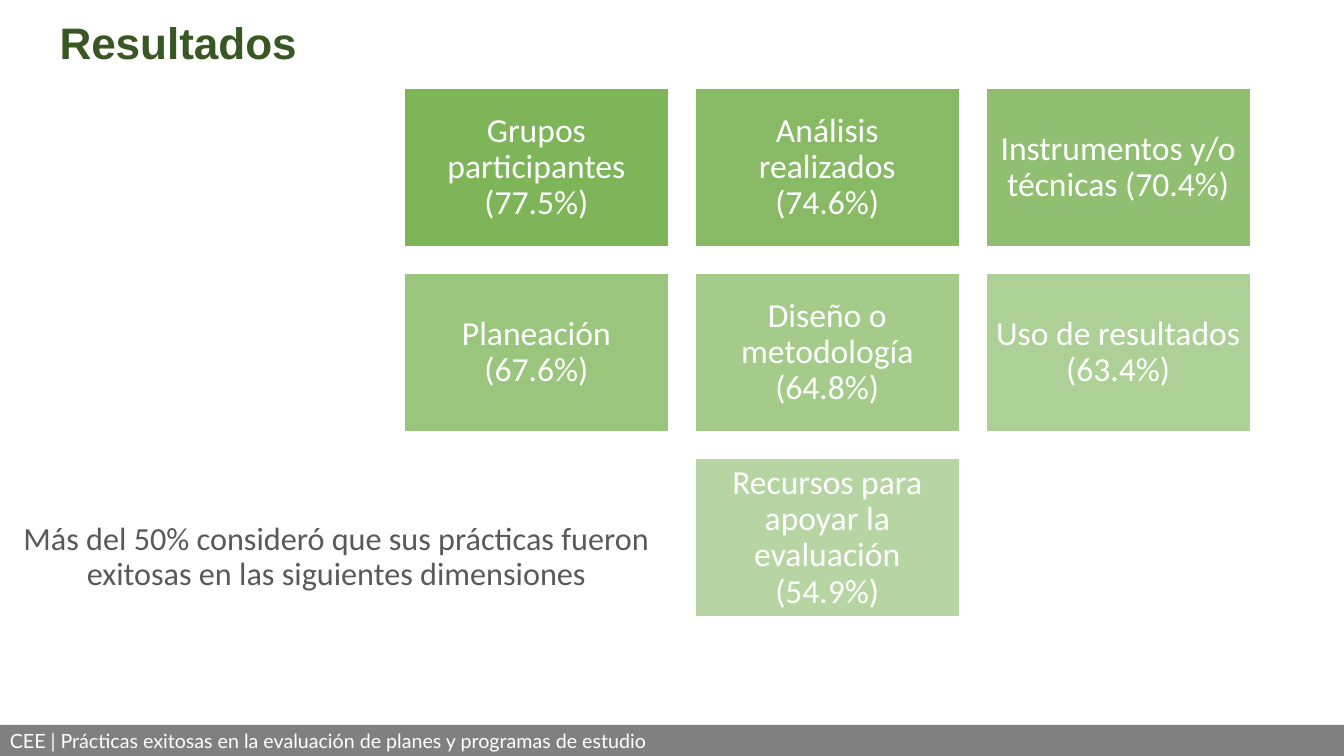
from lxml import etree
from pptx import Presentation
from pptx.dml.color import RGBColor
from pptx.enum.shapes import MSO_SHAPE
from pptx.enum.text import MSO_ANCHOR, MSO_AUTO_SIZE, PP_ALIGN
from pptx.oxml.ns import qn
from pptx.util import Inches, Pt


def color(value):
    return RGBColor.from_string(value)


def write(sp, text, font, size, hex_color, align, spacing, anchor, bold=False):
    tf = sp.text_frame
    tf.word_wrap = True
    tf.auto_size = MSO_AUTO_SIZE.NONE
    tf.vertical_anchor = anchor
    p = tf.paragraphs[0]
    p.text = text
    p.alignment = align
    p.line_spacing = spacing
    p.space_before = Pt(0)
    p.font.name = font
    p.font.size = Pt(size)
    p.font.bold = bold
    p.font.color.rgb = color(hex_color)
    return tf


prs = Presentation()
prs.slide_width = Inches(13.33)
prs.slide_height = Inches(7.5)
s = prs.slides.add_slide(prs.slide_layouts[5])

title = s.shapes.title
title.left, title.top = Inches(0.49), Inches(0.2)
title.width, title.height = Inches(8.3), Inches(0.58)
write(title, "Resultados", "Arial", 31.5, "385723",
      PP_ALIGN.LEFT, 0.8, MSO_ANCHOR.TOP, bold=True)

footer = s.shapes.add_shape(MSO_SHAPE.RECTANGLE, 0, Inches(7.19),
                            prs.slide_width, Inches(0.31))
footer.shadow.inherit = False
footer.fill.solid()
footer.fill.fore_color.rgb = color("808080")
footer.line.fill.background()
write(footer, "CEE | Prácticas exitosas en la evaluación de planes y programas de estudio",
      "Lato", 14, "FFFFFF", PP_ALIGN.JUSTIFY, 1.0, MSO_ANCHOR.MIDDLE)

summary = s.shapes.add_textbox(0, Inches(5.14), Inches(6.68), Inches(0.96))
write(summary, "Más del 50% consideró que sus prácticas fueron exitosas "
      "en las siguientes dimensiones",
      "Calibri", 23, "595959", PP_ALIGN.CENTER, 0.9, MSO_ANCHOR.TOP)

dimensions = [
    ("Grupos participantes (77.5%)", 0, 0, 90),
    ("Análisis realizados (74.6%)", 0, 1, 83),
    ("Instrumentos y/o técnicas (70.4%)", 0, 2, 77),
    ("Planeación (67.6%)", 1, 0, 70),
    ("Diseño o metodología (64.8%)", 1, 1, 63),
    ("Uso de resultados (63.4%)", 1, 2, 57),
    ("Recursos para apoyar la evaluación (54.9%)", 2, 1, 50),
]
box_w, box_h, gap = 2.62, 1.57, 0.265

for text, row, col, opacity in dimensions:
    sp = s.shapes.add_shape(
        MSO_SHAPE.RECTANGLE,
        Inches(4.01 + col * (box_w + gap)), Inches(0.88 + row * (box_h + gap)),
        Inches(box_w), Inches(box_h))
    sp.shadow.inherit = False
    sp.fill.solid()
    sp.fill.fore_color.rgb = color("70AD47")
    fill = sp.fill._xPr.find(qn("a:solidFill"))
    etree.SubElement(fill[0], qn("a:alpha"), val=str(opacity * 1000))
    sp.line.color.rgb = color("FFFFFF")
    sp.line.width = Pt(1)
    tf = write(sp, text, "Calibri", 24, "FFFFFF",
               PP_ALIGN.CENTER, 0.9, MSO_ANCHOR.MIDDLE)
    tf.margin_left = tf.margin_right = Inches(0.1)
    tf.margin_top = tf.margin_bottom = Inches(0.1)

prs.save("out.pptx")
